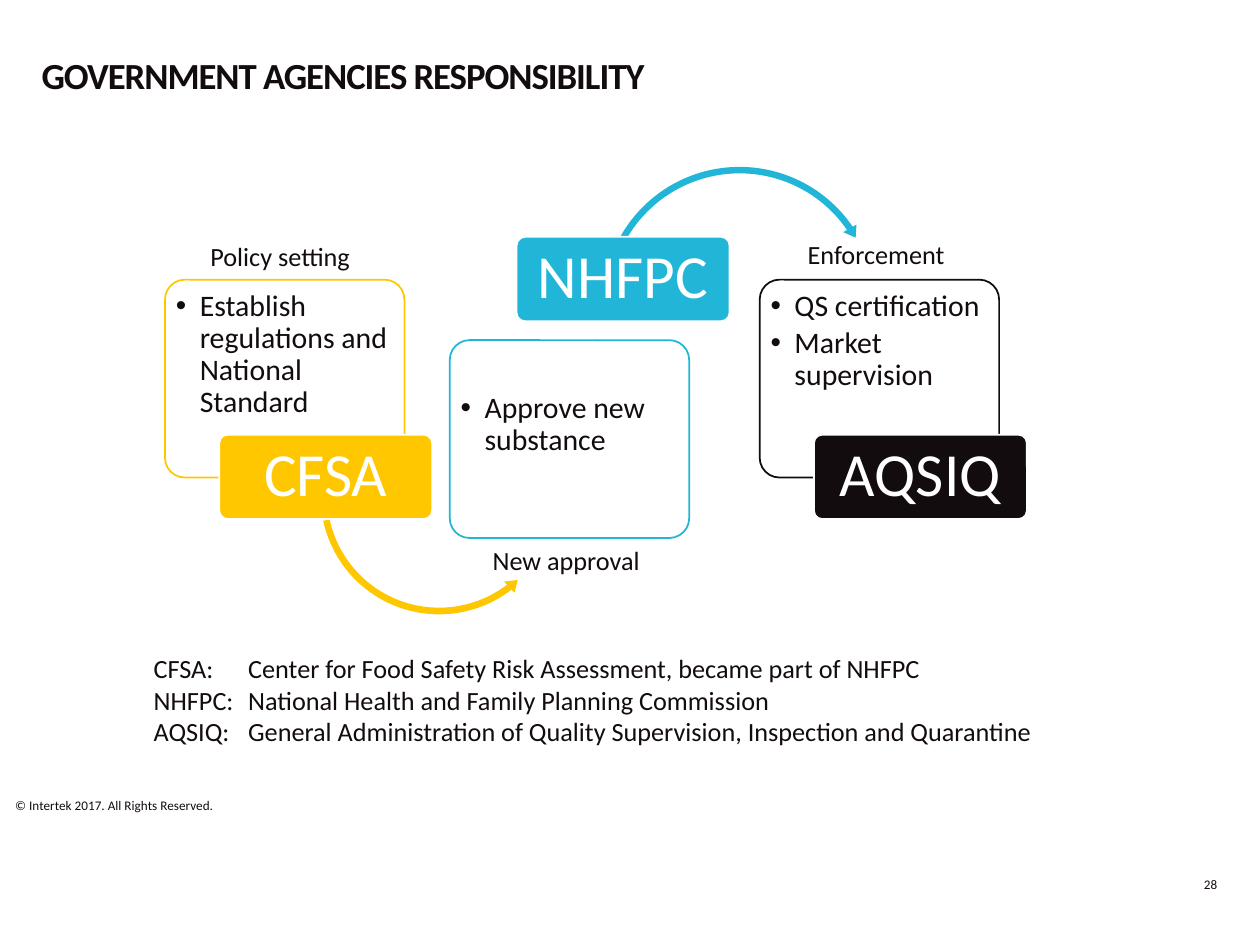
from dataclasses import dataclass

from lxml.etree import SubElement
from pptx import Presentation
from pptx.dml.color import RGBColor
from pptx.enum.shapes import MSO_SHAPE
from pptx.enum.text import MSO_ANCHOR, MSO_AUTO_SIZE, PP_ALIGN
from pptx.oxml.ns import qn
from pptx.util import Emu, Inches, Pt

COLORS = {"ink": "130C0E", "yellow": "FFC700", "blue": "21B6D7", "white": "FFFFFF"}
FONT = "Calibri"

# Diagram grid, in inches
PANEL_LEFT, TAG_LEFT, COLUMN_STEP = 1.31, 1.74, 2.36
PANEL_SIZE = (1.9, 1.57)
TAG_SIZE = (1.69, 0.67)


@dataclass
class Arrow:
    preset: MSO_SHAPE
    left: float
    top: float
    size: float
    adjustments: tuple[float, ...]


@dataclass
class Agency:
    name: str
    color: str
    duties: list[str]
    caption: str
    caption_box: tuple[float, float, float, float]
    panel_top: float = 2.22
    tag_top: float = 3.45
    panel_shift: float = 0
    text_drop: float = 0
    arrow: Arrow | None = None


AGENCIES = [
    Agency("CFSA", "yellow", ["Establish regulations and National Standard"],
           "Policy setting", (1.67, 1.91, 1.13, 0.25),
           arrow=Arrow(MSO_SHAPE.LEFT_CIRCULAR_ARROW, 2.51, 2.96, 1.95,
                       (0.027, 3.272, 31.465, 100.682, 0.031))),
    Agency("NHFPC", "blue", ["Approve new substance"],
           "New approval", (3.91, 4.32, 1.18, 0.25),
           panel_top=2.7, tag_top=1.88, panel_shift=-0.1, text_drop=0.33,
           arrow=Arrow(MSO_SHAPE.CIRCULAR_ARROW, 4.75, 1.29, 2.24,
                       (0.023, 2.827, 195.418, 125.755, 0.027))),
    Agency("AQSIQ", "ink", ["QS certification", "Market supervision"],
           "Enforcement", (6.41, 1.89, 1.1, 0.25)),
]

GLOSSARY = [
    ("CFSA", "Center for Food Safety Risk Assessment, became part of NHFPC"),
    ("NHFPC", "National Health and Family Planning Commission"),
    ("AQSIQ", "General Administration of Quality Supervision, Inspection and Quarantine"),
]


def rgb(color: str) -> RGBColor:
    return RGBColor.from_string(COLORS[color])


def set_margins(frame, left: float, top: float, right: float, bottom: float) -> None:
    frame.margin_left, frame.margin_top = Inches(left), Inches(top)
    frame.margin_right, frame.margin_bottom = Inches(right), Inches(bottom)


def write(frame, lines: list[str], size: float, color: str = "ink",
          align: PP_ALIGN = PP_ALIGN.LEFT, spacing: float | None = None) -> None:
    frame.text = "\n".join(lines)
    for paragraph in frame.paragraphs:
        paragraph.alignment = align
        paragraph.line_spacing = spacing
        for run in paragraph.runs:
            run.font.name, run.font.size = FONT, Pt(size)
            run.font.color.rgb = rgb(color)


def add_label(slide, box: tuple[float, float, float, float], lines: list[str],
              size: float, wrap: bool = True, align: PP_ALIGN = PP_ALIGN.LEFT,
              anchor: MSO_ANCHOR = MSO_ANCHOR.TOP):
    frame = slide.shapes.add_textbox(*map(Inches, box)).text_frame
    frame.word_wrap, frame.vertical_anchor = wrap, anchor
    set_margins(frame, 0, 0, 0, 0)
    write(frame, lines, size, align=align)
    return frame


def add_filled(slide, preset: MSO_SHAPE, left: float, top: float, width: float,
               height: float, fill: str, line: str | None = None):
    shape = slide.shapes.add_shape(preset, *map(Inches, (left, top, width, height)))
    shape.shadow.inherit = False
    shape.fill.solid()
    shape.fill.fore_color.rgb = rgb(fill)
    if line:
        shape.line.color.rgb, shape.line.width = rgb(line), Pt(1)
    else:
        shape.line.fill.background()
    return shape


def add_panel(slide, agency: Agency, column: int) -> None:
    left = PANEL_LEFT + column * COLUMN_STEP + agency.panel_shift
    panel = add_filled(slide, MSO_SHAPE.ROUNDED_RECTANGLE, left, agency.panel_top,
                       *PANEL_SIZE, "white", agency.color)
    panel.adjustments[0] = 0.1
    fill_color = panel.fill._xPr.find(qn("a:solidFill"))[0]
    SubElement(fill_color, qn("a:alpha"), val="90000")

    frame = panel.text_frame
    frame.word_wrap, frame.vertical_anchor = True, MSO_ANCHOR.TOP
    set_margins(frame, 0.04, 0.04 + agency.text_drop, 0.04, 0.04)
    write(frame, agency.duties, 17, spacing=0.9)
    for paragraph in frame.paragraphs:
        paragraph.space_after = Pt(3)
        properties = paragraph._p.get_or_add_pPr()
        properties.set("marL", str(Inches(0.19)))
        properties.set("indent", str(-Inches(0.19)))
        SubElement(properties, qn("a:buFont"), typeface="Arial")
        SubElement(properties, qn("a:buChar"), char="•")


def add_arrow(slide, arrow: Arrow, color: str) -> None:
    shape = add_filled(slide, arrow.preset, arrow.left, arrow.top,
                       arrow.size, arrow.size, color)
    for index, value in enumerate(arrow.adjustments):
        shape.adjustments[index] = value


def add_tag(slide, agency: Agency, column: int) -> None:
    tag = add_filled(slide, MSO_SHAPE.ROUNDED_RECTANGLE, TAG_LEFT + column * COLUMN_STEP,
                     agency.tag_top, *TAG_SIZE, agency.color, "white")
    tag.adjustments[0] = 0.1
    frame = tag.text_frame
    frame.word_wrap, frame.vertical_anchor = True, MSO_ANCHOR.MIDDLE
    set_margins(frame, 0.07, 0.05, 0.07, 0.05)
    write(frame, [agency.name], 35, "white", PP_ALIGN.CENTER, 0.9)


def add_title(slide, text: str) -> None:
    title = slide.shapes.title
    title.left, title.top, title.width, title.height = map(Inches, (0.33, 0.49, 8.81, 0.79))
    frame = title.text_frame
    frame.word_wrap, frame.vertical_anchor = True, MSO_ANCHOR.TOP
    frame.auto_size = MSO_AUTO_SIZE.NONE
    set_margins(frame, 0, 0, 0, 0)
    write(frame, [text], 21, spacing=0.8)
    run = frame.paragraphs[0].runs[0]
    run.font.bold = True
    run._r.get_or_add_rPr().set("spc", "-60")


def add_glossary(slide) -> None:
    lines = [f"{short}:\t{meaning}" for short, meaning in GLOSSARY]
    frame = add_label(slide, (1.22, 5.18, 8.03, 0.76), lines, 15)
    for paragraph in frame.paragraphs:
        tabs = SubElement(paragraph._p.get_or_add_pPr(), qn("a:tabLst"))
        SubElement(tabs, qn("a:tab"), pos=str(Emu(Inches(0.75))), algn="l")


def main() -> None:
    deck = Presentation()
    deck.slide_width, deck.slide_height = Inches(10), Inches(7.5)
    slide = deck.slides.add_slide(deck.slide_layouts[5])
    add_title(slide, "GOVERNMENT AGENCIES RESPONSIBILITY")

    # Agencies: duties, arrow to the next one, name on top
    for column, agency in enumerate(AGENCIES):
        add_panel(slide, agency, column)
        if agency.arrow:
            add_arrow(slide, agency.arrow, agency.color)
        add_tag(slide, agency, column)
    for agency in AGENCIES:
        add_label(slide, agency.caption_box, [agency.caption], 15, wrap=False)

    add_glossary(slide)

    # Footer
    add_label(slide, (0.12, 6.31, 3.92, 0.17), ["© Intertek 2017. All Rights Reserved."],
              7.5, anchor=MSO_ANCHOR.MIDDLE)
    add_label(slide, (9.04, 6.94, 0.62, 0.15), ["28"], 7.5,
              align=PP_ALIGN.RIGHT, anchor=MSO_ANCHOR.MIDDLE)
    deck.save("out.pptx")


if __name__ == "__main__":
    main()
